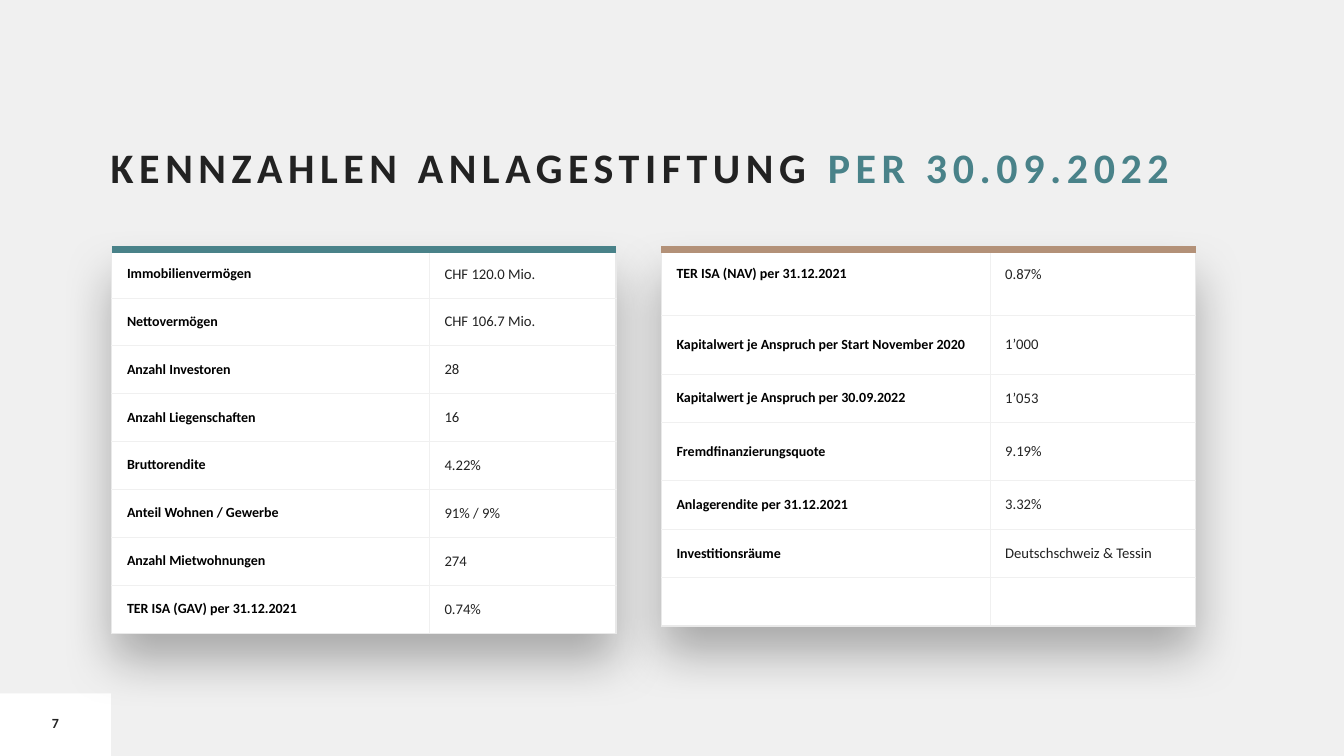
from dataclasses import dataclass

from lxml import etree
from pptx import Presentation
from pptx.dml.color import RGBColor
from pptx.enum.shapes import MSO_CONNECTOR, MSO_SHAPE
from pptx.enum.text import MSO_ANCHOR, PP_ALIGN
from pptx.oxml import parse_xml
from pptx.oxml.ns import nsdecls, qn
from pptx.util import Emu, Pt

STRAIGHT = MSO_CONNECTOR.STRAIGHT
RECTANGLE = MSO_SHAPE.RECTANGLE
TOP, MIDDLE = MSO_ANCHOR.TOP, MSO_ANCHOR.MIDDLE
CENTER = PP_ALIGN.CENTER

FONT = "Calibri"
BACKGROUND = RGBColor(0xF0, 0xF0, 0xF0)
FRAME = RGBColor(0xE9, 0xE9, 0xE9)
WHITE = RGBColor(0xFF, 0xFF, 0xFF)
BLACK = RGBColor(0x00, 0x00, 0x00)
DARK = RGBColor(0x22, 0x22, 0x22)
TEAL = RGBColor(0x49, 0x82, 0x89)
BROWN = RGBColor(0xB3, 0x91, 0x78)

EMU_PER_PX = 9144  # 100 px to the inch
TABLE_TOP = 248
CELL_INSET = 15


@dataclass(frozen=True)
class Row:
    label: str
    value: str
    height: int = 48
    anchor: MSO_ANCHOR = MIDDLE


@dataclass(frozen=True)
class FigureTable:
    left: int
    columns: tuple[int, int]
    accent: RGBColor
    rows: tuple[Row, ...]


ASSETS = FigureTable(111, (315, 185), TEAL, tuple(
    Row(label, value, 47, TOP) for label, value in (
        ("Immobilienvermögen", "CHF 120.0 Mio."),
        ("Nettovermögen", "CHF 106.7 Mio."),
        ("Anzahl Investoren", "28"),
        ("Anzahl Liegenschaften", "16"),
        ("Bruttorendite", "4.22%"),
        ("Anteil Wohnen / Gewerbe", "91% / 9%"),
        ("Anzahl Mietwohnungen", "274"),
        ("TER ISA (GAV) per 31.12.2021", "0.74%"),
    )))
RETURNS = FigureTable(656, (326, 204), BROWN, (
    Row("TER ISA (NAV) per 31.12.2021", "0.87%", 65, TOP),
    Row("Kapitalwert je Anspruch per Start November 2020", "1’000", 58),
    Row("Kapitalwert je Anspruch per 30.09.2022", "1’053"),
    Row("Fremdfinanzierungsquote", "9.19%", 58),
    Row("Anlagerendite per 31.12.2021", "3.32%"),
    Row("Investitionsräume", "Deutschschweiz & Tessin"),
    Row("", ""),
))


def px(length: int) -> Emu:
    return Emu(length * EMU_PER_PX)


def set_font(font, size: float, color: RGBColor, bold: bool) -> None:
    font.name = FONT
    font.size = Pt(size)
    font.bold = bold
    font.color.rgb = color


def add_border(cell, index: int, side: str, outer: bool) -> None:
    color, width = (FRAME, Pt(1)) if outer else (BACKGROUND, Pt(0.5))
    line = parse_xml(
        f'<a:{side} {nsdecls("a")} w="{width}"><a:solidFill>'
        f'<a:srgbClr val="{color}"/></a:solidFill></a:{side}>')
    cell._tc.get_or_add_tcPr().insert(index, line)


def add_table_shadow(table) -> None:
    shadow = parse_xml(
        f'<a:effectLst {nsdecls("a")}><a:outerShdw blurRad="{px(50)}" dist="{px(27)}" '
        'dir="5400000" algn="t" rotWithShape="0"><a:srgbClr val="000000">'
        '<a:alpha val="30000"/></a:srgbClr></a:outerShdw></a:effectLst>')
    table._tbl.tblPr.insert(0, shadow)


def add_figures(page, figures: FigureTable) -> None:
    width = sum(figures.columns)
    height = sum(row.height for row in figures.rows)
    last = len(figures.rows) - 1
    table = page.shapes.add_table(
        len(figures.rows), 2, px(figures.left), px(TABLE_TOP), px(width), px(height)).table
    table.first_row = table.horz_banding = False
    add_table_shadow(table)
    for column, column_width in zip(table.columns, figures.columns):
        column.width = px(column_width)

    for y, row in enumerate(figures.rows):
        table.rows[y].height = px(row.height)
        for x, text in enumerate((row.label, row.value)):
            cell = table.cell(y, x)
            cell.margin_left = cell.margin_right = px(CELL_INSET)
            cell.margin_top = cell.margin_bottom = px(CELL_INSET)
            cell.vertical_anchor = row.anchor
            cell.fill.solid()
            cell.fill.fore_color.rgb = WHITE
            sides = (("lnL", x == 0), ("lnR", x == 1), ("lnT", y == 0), ("lnB", y == last))
            for index, (side, outer) in enumerate(sides):
                add_border(cell, index, side, outer)
            para = cell.text_frame.paragraphs[0]
            para.text = text
            if x == 0:
                set_font(para.font, 10, BLACK, True)
            else:
                set_font(para.font, 10.5, DARK, False)


def add_accent(page, figures: FigureTable) -> None:
    right = figures.left + sum(figures.columns)
    accent = page.shapes.add_connector(
        STRAIGHT, px(figures.left), px(TABLE_TOP), px(right), px(TABLE_TOP))
    accent.line.color.rgb = figures.accent
    accent.line.width = Pt(5)
    etree.SubElement(accent._element.spPr, qn("a:effectLst"))


def add_title(page) -> None:
    box = page.shapes.add_textbox(px(100), px(145), px(1110), px(96))
    box.text_frame.word_wrap = True
    para = box.text_frame.paragraphs[0]
    para.line_spacing = 0.8
    for text, color in (("KENNZAHLEN ANLAGESTIFTUNG", DARK), (" PER 30.09.2022", TEAL)):
        span = para.add_run()
        span.text = text
        set_font(span.font, 30, color, True)
        span._r.get_or_add_rPr().set("spc", "400")


def add_page_number(page) -> None:
    tile = page.shapes.add_shape(RECTANGLE, 0, px(688), px(110), px(62))
    tile.shadow.inherit = False
    tile.fill.solid()
    tile.fill.fore_color.rgb = WHITE
    tile.line.fill.background()

    box = page.shapes.add_textbox(0, px(697), px(110), px(40))
    box.text_frame.word_wrap = True
    box.text_frame.vertical_anchor = MIDDLE
    para = box.text_frame.paragraphs[0]
    para.text = "7"
    para.alignment = CENTER
    set_font(para.font, 10, DARK, True)


def main() -> None:
    deck = Presentation()
    deck.slide_width, deck.slide_height = px(1333), px(750)
    page = deck.slides.add_slide(deck.slide_layouts[6])
    page.background.fill.solid()
    page.background.fill.fore_color.rgb = BACKGROUND

    # Page number and heading
    add_page_number(page)
    add_title(page)

    # Key figures, then the coloured bars on top of them
    tables = (ASSETS, RETURNS)
    for figures in tables:
        add_figures(page, figures)
    for figures in tables:
        add_accent(page, figures)

    deck.save("out.pptx")


if __name__ == "__main__":
    main()
